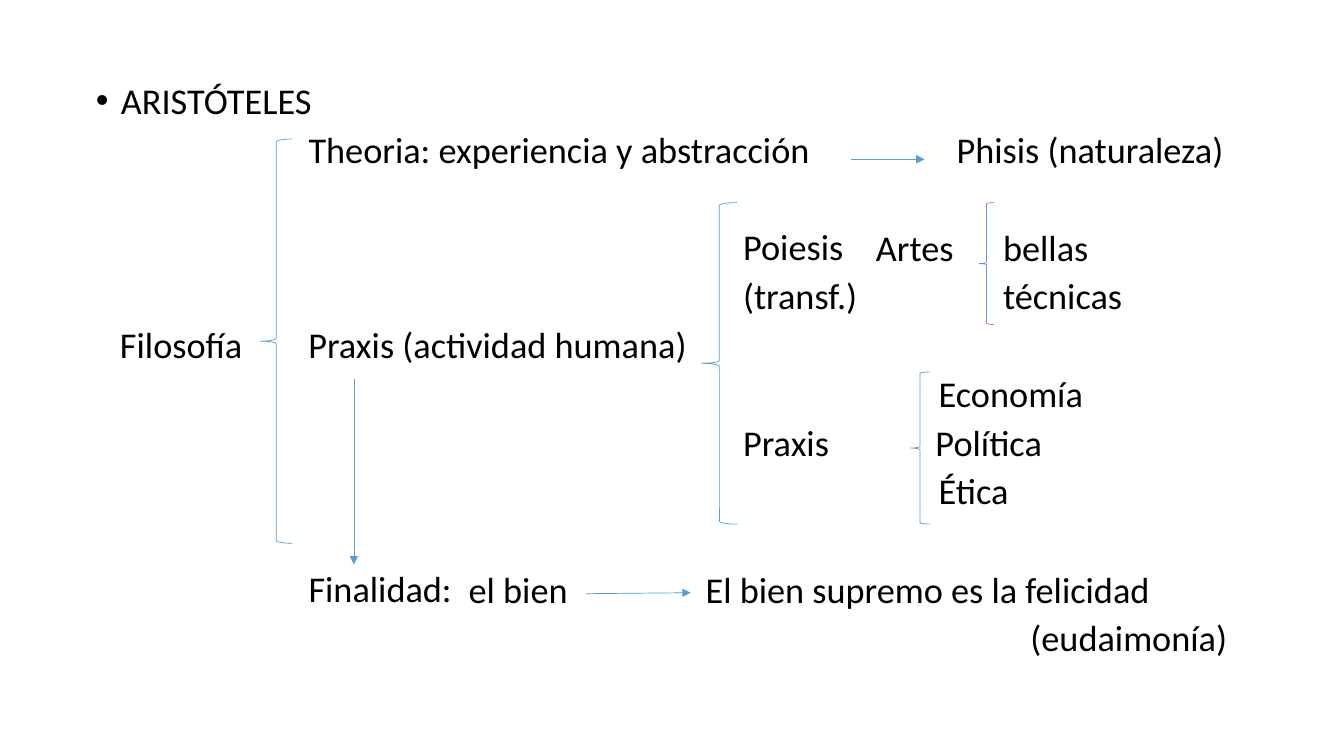
from pptx import Presentation
from pptx.dml.color import RGBColor
from pptx.enum import shapes, text
from pptx.oxml import ns
from pptx.util import Inches, Pt
from lxml import etree

COLORS = {"text": "000000", "line": "5B9BD5"}
FONT, SIZE = "Calibri", 25.9
GAP, ROW = 9.95, 34.9  # space before a row, full row pitch (points)
LEFT, TOP = 0.85, 0.81  # corner of the outline

# Column starts in inches, measured from the left edge of the text
NAME, BRANCH, GOOD, HAPPY, KIND, ART = 0.24, 2.11, 3.7, 6.05, 6.42, 7.74
POLIS, FIELD, NATURE, CRAFT, END = 8.33, 8.36, 8.54, 9.0, 9.27

# Each row: number, then (column, words) pairs
ROWS = [
    (1, [(BRANCH, "Theoria: experiencia y abstracción"), (NATURE, "Phisis (naturaleza)")]),
    (3, [(KIND, "Poiesis"), (ART, "Artes"), (CRAFT, "bellas")]),
    (4, [(KIND, "(transf.)"), (CRAFT, "técnicas")]),
    (5, [(NAME, "Filosofía"), (BRANCH, "Praxis (actividad humana)")]),
    (6, [(FIELD, "Economía")]),
    (7, [(KIND, "Praxis"), (POLIS, "Política")]),
    (8, [(FIELD, "Ética")]),
    (10, [(BRANCH, "Finalidad:"), (GOOD, "el bien"), (HAPPY, "El bien supremo es la felicidad")]),
    (11, [(END, "(eudaimonía)")]),
]

BRACES = [(2.58, 1.38, 0.32, 4.01), (9.71, 2.01, 0.15, 1.21),
          (6.96, 2.01, 0.35, 3.19), (9.03, 3.69, 0.19, 1.51)]
ARROWS = [(3.51, 3.76, 3.51, 5.6), (8.44, 1.58, 9.17, 1.58), (5.81, 5.89, 6.85, 5.88)]


def color(name):
    return RGBColor.from_string(COLORS[name])


def add_tag(parent, tag, **attrs):
    return etree.SubElement(parent, ns.qn(tag), attrs)


def style(para, before=0):
    para.line_spacing = 0.8
    para.space_before = Pt(before)
    para.space_after = Pt(0)
    para.font.name = FONT
    para.font.size = Pt(SIZE)
    para.font.color.rgb = color("text")


def add_item(para, words, margin, indent=0, before=0, bullet=False):
    para.text = words
    props = para._p.get_or_add_pPr()
    props.set("marL", str(Inches(margin)))
    props.set("indent", str(Inches(indent)))
    if bullet:
        add_tag(props, "a:buFont", typeface="Arial")
        add_tag(props, "a:buChar", char="•")
    else:
        add_tag(props, "a:buNone")
    style(para, before)


def add_label(slide, row, start, words):
    wide = 0.15 * len(words) + 0.35
    top = TOP + row * ROW / 72
    box = slide.shapes.add_textbox(*map(Inches, (LEFT + start, top, wide, 0.45)))
    box.text_frame.word_wrap = True
    para = box.text_frame.paragraphs[0]
    para.text = words
    style(para)


def set_line(line):
    line.color.rgb = color("line")
    line.width = Pt(0.5)


def add_brace(slide, box):
    brace = slide.shapes.add_shape(shapes.MSO_SHAPE.LEFT_BRACE, *map(Inches, box))
    brace.shadow.inherit = False
    brace.fill.background()
    set_line(brace.line)


def add_arrow(slide, ends):
    arrow = slide.shapes.add_connector(shapes.MSO_CONNECTOR.STRAIGHT, *map(Inches, ends))
    set_line(arrow.line)
    add_tag(arrow.line._get_or_add_ln(), "a:tailEnd", type="triangle")
    add_tag(arrow._element.spPr, "a:effectLst")


def main():
    deck = Presentation()
    deck.slide_width, deck.slide_height = Inches(13.33), Inches(7.5)
    slide = deck.slides.add_slide(deck.slide_layouts[1])
    title = slide.shapes.title._element
    title.getparent().remove(title)

    # Outline frame
    body = slide.placeholders[1]
    body.left, body.top, body.width, body.height = map(Inches, (LEFT, TOP, 11.5, 6.12))
    frame = body.text_frame
    frame.word_wrap = True
    frame.auto_size = text.MSO_AUTO_SIZE.NONE
    frame.vertical_anchor = text.MSO_ANCHOR.TOP
    add_item(frame.paragraphs[0], "ARISTÓTELES", 0.25, -0.25, bullet=True)

    # Rows: first column in the outline, further columns as labels
    last = 0
    for row, cells in ROWS:
        start, words = cells[0]
        before = GAP + (row - last - 1) * ROW
        add_item(frame.add_paragraph(), words, start, before=before)
        for start, words in cells[1:]:
            add_label(slide, row, start, words)
        last = row

    # Braces and arrows
    for box in BRACES:
        add_brace(slide, box)
    for ends in ARROWS:
        add_arrow(slide, ends)

    deck.save("out.pptx")


if __name__ == "__main__":
    main()
